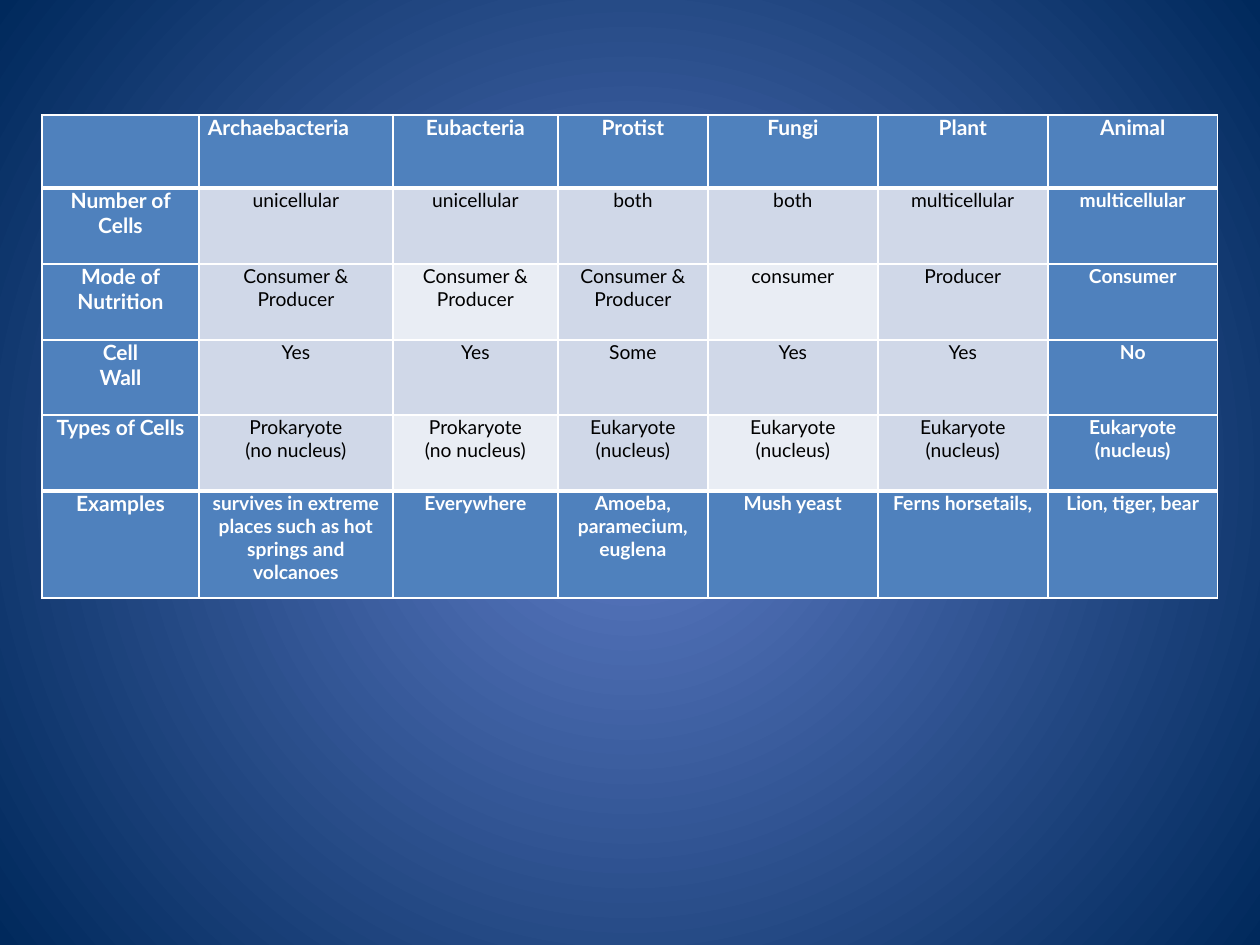
from lxml import etree
from pptx import Presentation
from pptx import util as u
from pptx.dml.color import RGBColor
from pptx.enum import text as t
from pptx.oxml.ns import qn

SCALE = 914400 / 126
WIDTHS = [157, 194, 165, 150, 170, 170, 170]
HEIGHTS = [73, 76, 76, 75, 76, 107]
ROWS = [
    ["", "Archaebacteria", "Eubacteria", "Protist", "Fungi", "Plant", "Animal"],
    ["Number of Cells", "unicellular", "unicellular", "both", "both",
     "multicellular", "multicellular"],
    ["Mode of Nutrition", "Consumer &\nProducer", "Consumer &\nProducer",
     "Consumer &\nProducer", "consumer", "Producer", "Consumer"],
    ["Cell\nWall", "Yes", "Yes", "Some", "Yes", "Yes", "No"],
    ["Types of Cells", "Prokaryote\n(no nucleus)", "Prokaryote\n(no nucleus)",
     "Eukaryote\n(nucleus)", "Eukaryote\n(nucleus)", "Eukaryote\n(nucleus)",
     "Eukaryote\n(nucleus)"],
    ["Examples", "survives in extreme places such as hot springs and volcanoes",
     "Everywhere", "Amoeba, paramecium, euglena", "Mush yeast",
     "Ferns horsetails,", "Lion, tiger, bear"],
]


def px(n):
    return u.Emu(round(n * SCALE))


def rgb(code):
    return RGBColor.from_string(code)


def write(frame, words, font="Lato", size=11, color="000000", bold=False,
          align=t.PP_ALIGN.CENTER):
    frame.text = words
    for para in frame.paragraphs:
        para.alignment = align
        for run in para.runs:
            run.font.name = font
            run.font.size = u.Pt(size)
            run.font.bold = bold
            run.font.color.rgb = rgb(color)


class Deck:
    blue, pale, light, white = "4F81BD", "D0D8E8", "E9EDF4", "FFFFFF"

    def __init__(self, wide, high):
        self.prs = Presentation()
        self.prs.slide_width, self.prs.slide_height = px(wide), px(high)
        self.slide = self.prs.slides.add_slide(self.prs.slide_layouts[6])

    def glow(self, inner, outer):
        fill = self.slide.background.fill
        fill.gradient()
        for stop, code, place in zip(fill.gradient_stops, (inner, outer), (0, 1)):
            stop.color.rgb = rgb(code)
            stop.position = place
        grad = next(self.slide.element.iter(qn("a:gradFill")))
        grad.remove(grad.find(qn("a:lin")))
        ring = etree.SubElement(grad, qn("a:path"), path="circle")
        etree.SubElement(ring, qn("a:fillToRect"),
                         {side: "50000" for side in "ltrb"})

    def edge(self, cell, **sides):
        props = cell._tc.get_or_add_tcPr()
        for side, width in sides.items():
            line = etree.SubElement(props, qn("a:ln" + side), w=str(u.Pt(width)))
            solid = etree.SubElement(line, qn("a:solidFill"))
            etree.SubElement(solid, qn("a:srgbClr"), val=self.white)

    def cell(self, cell, words, row, col):
        last = len(ROWS) - 1
        dark = row in (0, last) or col in (0, len(WIDTHS) - 1)
        band = self.light if row % 2 == 0 and col % 2 == 0 else self.pale
        self.edge(cell, L=1, R=1, T=3 if row in (1, last) else 1,
                  B=3 if row in (0, last - 1) else 1)
        cell.fill.solid()
        cell.fill.fore_color.rgb = rgb(self.blue if dark else band)
        cell.margin_left = cell.margin_right = px(9)
        cell.margin_top = cell.margin_bottom = 0
        left = (row, col) == (0, 1)
        write(cell.text_frame, words, size=12 if 0 in (row, col) else 11,
              color=self.white if dark else "000000", bold=dark,
              align=t.PP_ALIGN.LEFT if left else t.PP_ALIGN.CENTER)

    def table(self, x, y, rows, widths, heights):
        grid = self.slide.shapes.add_table(
            len(rows), len(widths), px(x), px(y),
            px(sum(widths)), px(sum(heights))).table
        for col, wide in zip(grid.columns, widths):
            col.width = px(wide)
        for row, high in zip(grid.rows, heights):
            row.height = px(high)
        for r, line in enumerate(rows):
            for c, words in enumerate(line):
                self.cell(grid.cell(r, c), words, r, c)


def main():
    deck = Deck(1260, 945)
    deck.glow("5E7CC5", "00295C")
    deck.table(42, 115, ROWS, WIDTHS, HEIGHTS)
    deck.prs.save("out.pptx")


if __name__ == "__main__":
    main()
